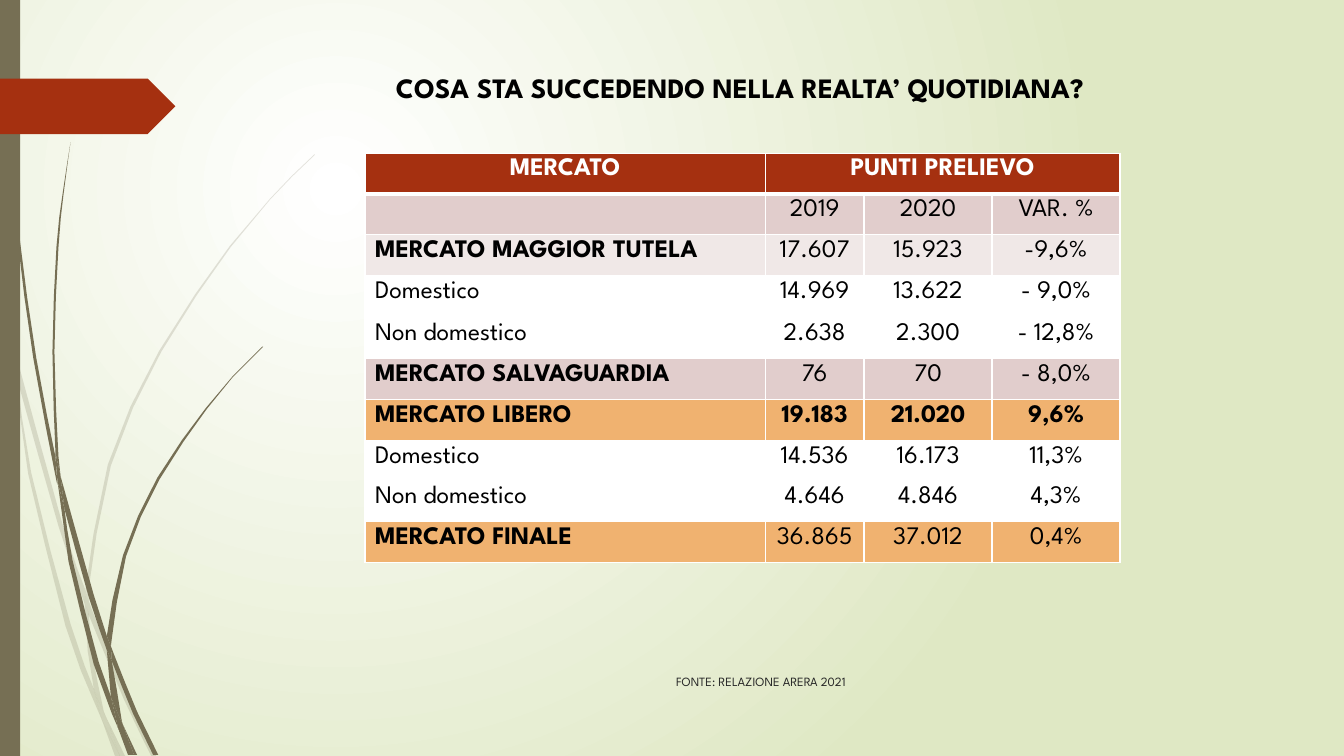
import dataclasses

import pptx
import pptx.dml.color
import pptx.enum.shapes
import pptx.enum.text
import pptx.oxml
import pptx.oxml.ns
import pptx.util

Inches = pptx.util.Inches
ALIGN = pptx.enum.text.PP_ALIGN
SHAPE = pptx.enum.shapes.MSO_SHAPE
qn = pptx.oxml.ns.qn


@dataclasses.dataclass(frozen=True)
class Theme:
    font: str = "League Spartan"
    white: str = "FFFFFF"
    black: str = "000000"
    grey: str = "262626"
    lime: str = "DFE8C4"
    olive: str = "766F54"
    rust: str = "A53010"
    rose: str = "E1CDCC"
    blush: str = "F0E8E7"
    amber: str = "F0B270"
    head: int = 20
    body: int = 18
    note: int = 9


T = Theme()

# Each piece of a stem is two edges, each a run of points in inches.
PALE = [
    ([(.11, 3.5), (.09, 3.22), (0, 2.82)], [(0, 2.99), (.1, 3.44)]),
    ([(.14, 3.45), (.62, 5.2), (.85, 5.86)],
     [(.84, 5.99), (.58, 5.22), (.17, 3.76)]),
    ([(.88, 5.96), (.92, 6.07), (1.27, 6.92), (1.55, 7.5)],
     [(1.5, 7.5), (1.23, 6.94), (.88, 6.1)]),
    ([(1.05, 7.11), (1.24, 7.5)], [(1.19, 7.5)]),
    ([(.11, 3.5), (.17, 3.76), (.31, 4.69), (.7, 6.19), (.93, 6.83)],
     [(.99, 7.07), (1.01, 7.14), (.92, 6.93), (.65, 6.21), (.28, 4.7)]),
    ([(.84, 5.99), (.88, 6.08), (.91, 6.46), (1.03, 7.06), (1.05, 7.11)],
     [(.96, 6.92), (.93, 6.83), (.87, 6.46)]),
    ([(.88, 5.96), (.88, 5.84), (1.1, 4.62), (1.6, 3.49), (2.29, 2.45),
      (2.68, 1.98), (2.9, 1.75), (3.12, 1.54)],
     [(3.12, 1.53), (2.89, 1.75), (2.68, 1.97), (2.28, 2.44), (1.58, 3.48),
      (1.07, 4.61), (.85, 5.84)]),
    ([(1.01, 7.14), (1.19, 7.5)], [(1.14, 7.5)]),
    ([(.85, 5.86), (.88, 5.96), (.88, 6.1)], [(.88, 6.08), (.84, 5.99)]),
    ([(.93, 6.83), (.96, 6.92), (1.05, 7.11), (1.19, 7.5)],
     [(1.01, 7.14), (.99, 7.07)]),
]
DARK = [
    ([(.04, 0), (.05, .48), (.08, 1.09), (.19, 2.32), (.36, 3.55), (.55, 4.53)],
     [(.57, 4.81), (.56, 4.77), (.33, 3.55), (.17, 2.33), (.07, 1.1),
      (.04, .48), (.03, 0)]),
    ([(.6, 4.72), (.93, 5.9), (1.06, 6.31)],
     [(1.06, 6.45), (.88, 5.92), (.64, 5.05)]),
    ([(1.1, 6.41), (1.13, 6.49), (1.36, 7.06), (1.57, 7.49)],
     [(1.52, 7.49), (1.32, 7.08), (1.11, 6.56)]),
    ([(.57, 4.77), (.64, 5.05), (.72, 5.56), (.98, 6.57), (1.1, 6.91)],
     [(1.16, 7.17), (1.17, 7.22), (1.11, 7.08), (.93, 6.59), (.68, 5.57)]),
    ([(.7, 1.41), (.63, 1.93), (.58, 2.45), (.54, 3.49), (.58, 4.53), (.6, 4.72)],
     [(.55, 4.49), (.52, 3.49), (.56, 2.45), (.62, 1.93), (.7, 1.41)]),
    ([(1.22, 7.19), (1.36, 7.49)], [(1.33, 7.49)]),
    ([(.55, 4.49), (.6, 4.72), (.64, 5.05)], [(.57, 4.77), (.55, 4.53)]),
    ([(2.61, 3.44), (2.31, 3.74), (2.05, 4.06), (1.58, 4.76), (1.25, 5.52),
      (1.11, 6.33)],
     [(1.1, 6.41), (1.06, 6.31), (1.22, 5.51), (1.56, 4.74), (2.04, 4.05),
      (2.31, 3.73), (2.6, 3.44)]),
    ([(1.17, 7.22), (1.31, 7.49)], [(1.27, 7.49)]),
    ([(1.06, 6.45), (1.11, 6.56), (1.21, 7.16), (1.22, 7.19)],
     [(1.16, 7.06), (1.1, 6.91)]),
    ([(1.06, 6.31), (1.1, 6.41), (1.11, 6.56)], [(1.06, 6.45)]),
    ([(1.1, 6.91), (1.16, 7.06), (1.22, 7.19), (1.33, 7.49)],
     [(1.3, 7.49), (1.17, 7.22), (1.16, 7.17)]),
]

COLS = [3.97, .98, 1.27, 1.27]
ROWS = [
    (T.rust, True, True, ["MERCATO", "PUNTI PRELIEVO", "", ""]),
    (T.rose, False, False, ["", "2019", "2020", "VAR. %"]),
    (T.blush, True, False, ["MERCATO MAGGIOR TUTELA", "17.607", "15.923", "-9,6%"]),
    (T.white, False, False, ["Domestico", "14.969", "13.622", "- 9,0%"]),
    (T.white, False, False, ["Non domestico", "2.638", "2.300", "- 12,8%"]),
    (T.rose, True, False, ["MERCATO SALVAGUARDIA", "76", "70", "- 8,0%"]),
    (T.amber, True, True, ["MERCATO LIBERO", "19.183", "21.020", "9,6%"]),
    (T.white, False, False, ["Domestico", "14.536", "16.173", "11,3%"]),
    (T.white, False, False, ["Non domestico", "4.646", "4.846", "4,3%"]),
    (T.amber, True, False, ["MERCATO FINALE", "36.865", "37.012", "0,4%"]),
]
PITCH = 4.05 / len(ROWS)
TALL = {3: .42}


def rgb(code):
    return pptx.dml.color.RGBColor.from_string(code)


def write(frame, text, size=T.body, color=T.black, bold=False, align=ALIGN.CENTER):
    line = frame.paragraphs[0]
    line.alignment = align
    run = line.add_run()
    run.text = text
    font = run.font
    font.name, font.size, font.bold = T.font, pptx.util.Pt(size), bold
    font.color.rgb = rgb(color)


def label(slide, box, text, **form):
    frame = slide.shapes.add_textbox(*map(Inches, box)).text_frame
    frame.word_wrap = True
    frame.vertical_anchor = pptx.enum.text.MSO_ANCHOR.MIDDLE
    write(frame, text, **form)


def paint(shape, color):
    shape.shadow.inherit = False
    shape.fill.solid()
    shape.fill.fore_color.rgb = rgb(color)
    shape.line.fill.background()


def smooth(edge):
    """Add a Catmull-Rom midpoint to each long step of the edge."""
    ends = [edge[0], *edge, edge[-1]]
    curve = [edge[0]]
    for a, b, c, d in zip(ends, ends[1:], ends[2:], ends[3:]):
        if abs(c[1] - b[1]) > .5:
            curve.append(tuple((9 * (q + r) - p - s) / 16
                               for p, q, r, s in zip(a, b, c, d)))
        curve.append(c)
    return curve


def stems(slide, left, top, pieces, alpha=100):
    group = slide.shapes.add_group_shape()
    for edges in pieces:
        first, *rest = [(Inches(left + x), Inches(top + y))
                        for edge in edges for x, y in smooth(edge)]
        pen = group.shapes.build_freeform(*first, scale=1.0)
        pen.add_line_segments(rest, close=True)
        stem = pen.convert_to_shape()
        paint(stem, T.olive)
        if alpha < 100:
            tint = stem._element.spPr.find(".//" + qn("a:srgbClr"))
            tint.append(tint.makeelement(qn("a:alpha"), {"val": str(alpha * 1000)}))


def glow(slide):
    """Fill the background with a round gradient centred upper left."""
    fill = slide.background.fill
    fill.gradient()
    for stop, color in zip(fill.gradient_stops, (T.white, T.lime)):
        stop.color.rgb = rgb(color)
    grad = slide._element.find(".//" + qn("a:gradFill"))
    grad.replace(grad.find(qn("a:lin")), pptx.oxml.parse_xml(
        f'<a:path xmlns:a="{pptx.oxml.ns.nsuri("a")}" path="circle">'
        '<a:fillToRect l="50000" t="50000" r="100000" b="100000"/></a:path>'))


def decor(slide, left, top, height):
    stems(slide, left, top, PALE, alpha=20)
    stems(slide, left, top, DARK)
    for kind, y, wide, high, color in (
            (SHAPE.RECTANGLE, 0, .2, height, T.olive),
            (SHAPE.PENTAGON, .78, 1.74, .55, T.rust)):
        paint(slide.shapes.add_shape(
            kind, *map(Inches, (left, top + y, wide, high))), color)


def border(cell, base):
    """Draw white sides, with a base of the given width in points."""
    for side, width in (("L", 1), ("R", 1), ("T", 1), ("B", base)):
        cell._tc.get_or_add_tcPr().append(pptx.oxml.parse_xml(
            f'<a:ln{side} xmlns:a="{pptx.oxml.ns.nsuri("a")}" w="{width * 12700}">'
            f'<a:solidFill><a:srgbClr val="{T.white}"/></a:solidFill></a:ln{side}>'))


def market(slide, left, top):
    high = [TALL.get(i, PITCH) for i in range(len(ROWS))]
    box = left, top, sum(COLS), sum(high)
    table = slide.shapes.add_table(len(ROWS), len(COLS), *map(Inches, box)).table
    table.first_row = table.horz_banding = False
    for col, width in zip(table.columns, COLS):
        col.width = Inches(width)
    for i, (fill, name, value, texts) in enumerate(ROWS):
        table.rows[i].height = Inches(high[i])
        for j, text in enumerate(texts):
            cell = table.cell(i, j)
            border(cell, 1 if i else 3)
            cell.fill.solid()
            cell.fill.fore_color.rgb = rgb(fill)
            if text:
                write(cell.text_frame, text, bold=value if j else name,
                      color=T.black if i else T.white,
                      align=ALIGN.LEFT if i and not j else ALIGN.CENTER)
    table.cell(0, 1).merge(table.cell(0, 3))


def main():
    deck = pptx.Presentation()
    deck.slide_width, deck.slide_height = Inches(13.33), Inches(7.5)
    slide = deck.slides.add_slide(deck.slide_layouts[6])
    glow(slide)
    decor(slide, 0, 0, 7.5)
    label(slide, (1.92, 6.6, 11.25, .33), "FONTE: RELAZIONE ARERA 2021",
          size=T.note, color=T.grey)
    label(slide, (3.04, .65, 8.6, .44),
          "COSA STA SUCCEDENDO NELLA REALTA’ QUOTIDIANA?", size=T.head, bold=True)
    market(slide, 3.62, 1.52)
    deck.save("out.pptx")


if __name__ == "__main__":
    main()
